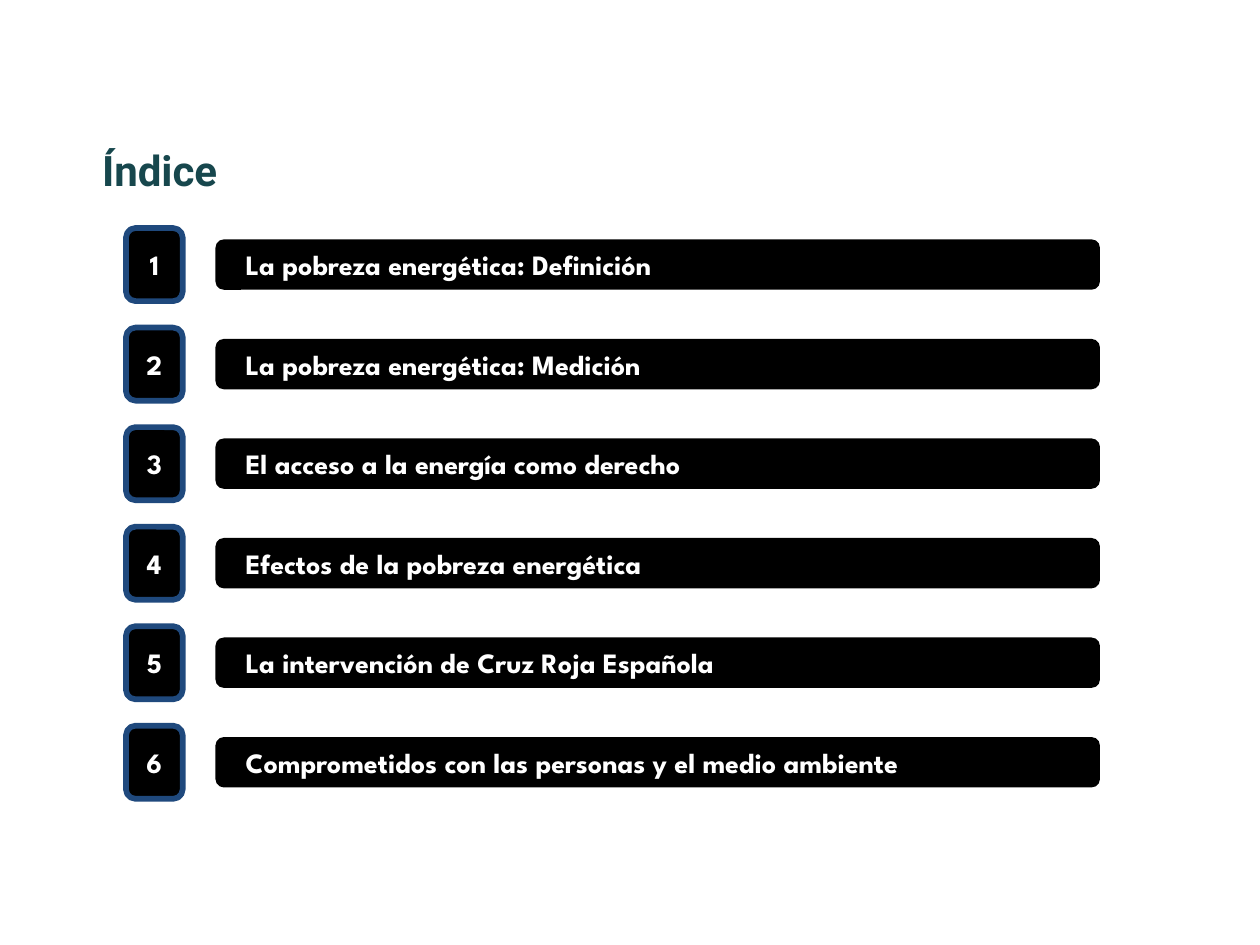
"""Build the index slide: a title and six numbered topic bars."""
from pptx import Presentation
from pptx.dml.color import RGBColor
from pptx.enum.shapes import MSO_SHAPE
from pptx.enum.text import MSO_ANCHOR, MSO_AUTO_SIZE, PP_ALIGN
from pptx.util import Inches, Pt

ROUNDED = MSO_SHAPE.ROUNDED_RECTANGLE
MIDDLE, BOTTOM = MSO_ANCHOR.MIDDLE, MSO_ANCHOR.BOTTOM
LEFT, CENTER = PP_ALIGN.LEFT, PP_ALIGN.CENTER
NO_AUTOFIT = MSO_AUTO_SIZE.NONE

THEME = {
    "title": ("Roboto", 24, RGBColor.from_string("17474D")),
    "item": ("League Spartan", 16, RGBColor.from_string("FFFFFF")),
    "fill": RGBColor.from_string("000000"),
    "border": RGBColor.from_string("1F497D"),
    "border_width": Pt(3.25),
}

TOPICS = [
    "La pobreza energética: Definición",
    "La pobreza energética: Medición",
    "El acceso a la energía como derecho",
    "Efectos de la pobreza energética",
    "La intervención de Cruz Roja Española",
    "Comprometidos con las personas y el medio ambiente",
]
FIRST_ROW, ROW_PITCH = 1.81, 0.79
NUMBER_LEFT, NUMBER_WIDTH, NUMBER_HEIGHT = 1, 0.45, 0.58
BAR_LEFT, BAR_WIDTH, BAR_HEIGHT = 1.71, 7.02, 0.4
BAR_OFFSET = (NUMBER_HEIGHT - BAR_HEIGHT) / 2


def write_text(shape, text, style, alignment, anchor, margins):
    frame = shape.text_frame
    frame.word_wrap = True
    frame.auto_size = NO_AUTOFIT
    frame.vertical_anchor = anchor
    frame.margin_left, frame.margin_top, frame.margin_right, frame.margin_bottom = map(Inches, margins)
    paragraph = frame.paragraphs[0]
    paragraph.text = text
    paragraph.alignment = alignment
    font = paragraph.font
    font.name, size, font.color.rgb = THEME[style]
    font.size = Pt(size)
    font.bold = True


def add_box(slide, left, top, width, height):
    shape = slide.shapes.add_shape(ROUNDED, *map(Inches, (left, top, width, height)))
    shape.shadow.inherit = False
    shape.fill.solid()
    shape.fill.fore_color.rgb = THEME["fill"]
    shape.line.fill.background()
    return shape


presentation = Presentation()
presentation.slide_width, presentation.slide_height = Inches(10), Inches(7.5)
slide = presentation.slides.add_slide(presentation.slide_layouts.get_by_name("Title Only"))

title = slide.shapes.title
title.left, title.top, title.width, title.height = map(Inches, (0.55, 1.05, 8.54, 0.63))
write_text(title, "Índice", "title", LEFT, BOTTOM, (0.26, 0.05, 0.18, 0.13))

for row, topic in enumerate(TOPICS):
    top = FIRST_ROW + row * ROW_PITCH
    number = add_box(slide, NUMBER_LEFT, top, NUMBER_WIDTH, NUMBER_HEIGHT)
    number.line.color.rgb = THEME["border"]
    number.line.width = THEME["border_width"]
    write_text(number, str(row + 1), "item", CENTER, MIDDLE, (0.05, 0.05, 0.05, 0.05))

    bar = add_box(slide, BAR_LEFT, top + BAR_OFFSET, BAR_WIDTH, BAR_HEIGHT)
    write_text(bar, topic, "item", LEFT, MIDDLE, (0.22, 0.05, 0.1, 0.05))

presentation.save("out.pptx")
